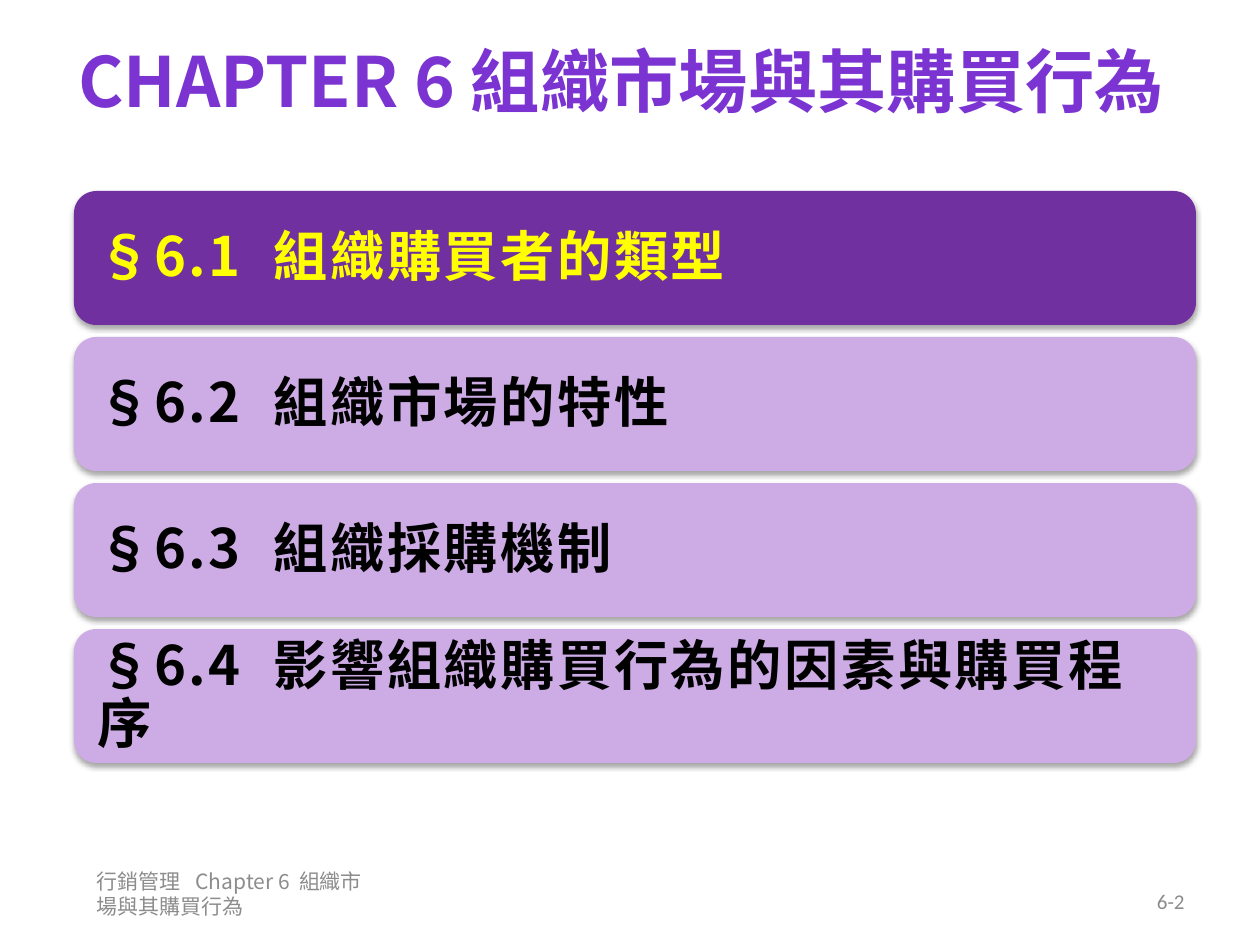
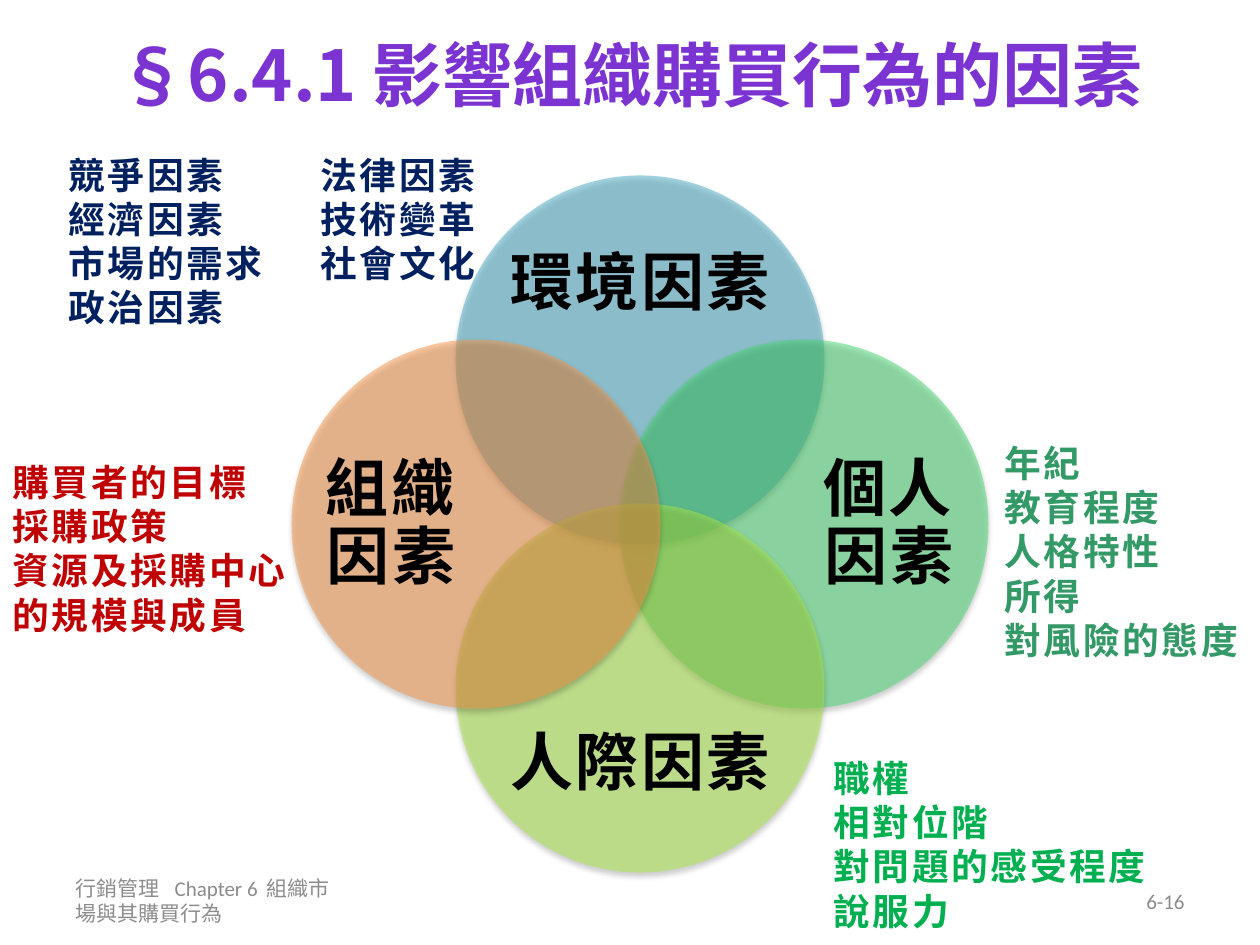
from dataclasses import dataclass

from lxml.etree import SubElement
from pptx import Presentation
from pptx.dml.color import RGBColor
from pptx.enum.shapes import MSO_SHAPE
from pptx.enum.text import MSO_ANCHOR, PP_ALIGN
from pptx.oxml.ns import qn
from pptx.util import Emu, Pt

# Within a line of text, a number is the extra width in points of the space there.
BAR_GAP = 10
FOOTER = ("行銷管理", 6, "Chapter 6", 2.5, "組織市場與其購買行為")

CHAPTER_TITLE = "CHAPTER 6 組織市場與其購買行為"
SECTIONS = [
    ("§6.1", BAR_GAP, "組織購買者的類型"),
    ("§6.2", BAR_GAP, "組織市場的特性"),
    ("§6.3", BAR_GAP, "組織採購機制"),
    ("§6.4", BAR_GAP, "影響組織購買行為的因素與購買程序"),
]
CURRENT_SECTION = 0

FACTORS_TITLE = "§6.4.1 影響組織購買行為的因素"
NOTES = [  # box in px, colour, lines
    ((56, 147, 248, 190), "002060", ["競爭因素", "經濟因素", "市場的需求", "政治因素"]),
    ((308, 147, 223, 146), "002060", ["法律因素", "技術變革", "社會文化"]),
    ((0, 454, 319, 190), "C00000", ["購買者的目標", "採購政策", "資源及採購中心的規模與成員"]),
    ((821, 750, 421, 190), "00B050", ["職權", "相對位階", "對問題的感受程度", "說服力"]),
    ((992, 435, 268, 235), "339966",
     ["年紀", "教育程度", "人格特性", "所得", "對風險的態度"]),
]
FACTORS = [  # name, colour, direction from the centre
    ("環境因素", "4BACC6", (0, -1)),
    ("個人因素", "47D872", (1, 0)),
    ("人際因素", "ACE946", (0, 1)),
    ("組織因素", "F79646", (-1, 0)),
]

# Geometry in px
BAR_LEFT, BAR_TOP, BAR_WIDTH, BAR_HEIGHT, BAR_SPACE = 74, 191, 1122, 134, 12
CENTRE_X, CENTRE_Y, DIAMETER, CIRCLE_OFFSET = 640, 524, 369, 164
WIDE_LABEL, TALL_LABEL = (285, 117), (142, 285)
WIDE_LABEL_OFFSET, TALL_LABEL_OFFSET = 240, 249


@dataclass(frozen=True)
class Theme:
    font: str = "Noto Sans CJK SC"
    latin: str = "Calibri"
    title: str = "7B34D2"
    footer: str = "8C8C8C"
    text: str = "000000"
    bar: str = "CDACE6"
    bar_current: str = "7030A0"
    text_current: str = "FFFF00"
    chapter_size: float = 39.6
    title_size: float = 40
    bar_size: float = 31
    label_size: float = 36
    note_size: float = 21
    footer_size: float = 12
    tracking: float = 1.5
    leading: float = 1.2
    tight_leading: float = 1.08


T = Theme()


def px(n):
    return Emu(round(n * 914400 / 126))


def place(shape, box):
    shape.left, shape.top, shape.width, shape.height = map(px, box)


def add_run(p, text, size, color, bold, tracking, latin):
    r = p.add_run()
    r.text = text
    r.font.size, r.font.bold, r.font.name = Pt(size), bold, latin
    r.font.color.rgb = RGBColor.from_string(color)
    rpr = r.font._element
    rpr.set("spc", str(round(tracking * 100)))
    SubElement(rpr, qn("a:ea")).set("typeface", T.font)


def write(shape, lines, size, color, bold=True, tracking=T.tracking, latin=T.font,
          align=PP_ALIGN.LEFT, anchor=MSO_ANCHOR.MIDDLE, leading=T.leading,
          inset_x=12.6, inset_y=6):
    """Fill a shape with one paragraph of lines at a fixed line height."""
    tf = shape.text_frame
    tf.word_wrap = True
    tf.vertical_anchor = anchor
    tf.margin_left = tf.margin_right = px(inset_x)
    tf.margin_top = tf.margin_bottom = px(inset_y)
    p = tf.paragraphs[0]
    p.alignment = align
    p.line_spacing = Pt(size * leading)
    p.space_before = p.space_after = Pt(0)
    for i, line in enumerate(lines):
        if i:
            p.add_line_break()
        for part in line if isinstance(line, tuple) else (line,):
            is_text = isinstance(part, str)
            add_run(p, part if is_text else " ", size, color, bold,
                    tracking if is_text else part, latin)


def add_text(s, box, lines, size, color, **style):
    write(s.shapes.add_textbox(*map(px, box)), lines, size, color, **style)


def add_shadowed(s, kind, box, color, shadow_alpha, alpha=100):
    sp = s.shapes.add_shape(kind, *map(px, box))
    sp.fill.solid()
    sp.fill.fore_color.rgb = RGBColor.from_string(color)
    sp.line.fill.background()
    sp.shadow.inherit = False
    sppr = sp._element.spPr
    if alpha < 100:
        fill = sppr.find(qn("a:solidFill")).find(qn("a:srgbClr"))
        SubElement(fill, qn("a:alpha")).set("val", str(alpha * 1000))
    shadow = SubElement(sppr.find(qn("a:effectLst")), qn("a:outerShdw"),
                        blurRad=str(Pt(3.1)), dist=str(Pt(1.8)), dir="5400000",
                        rotWithShape="0")
    black = SubElement(shadow, qn("a:srgbClr"), val="000000")
    SubElement(black, qn("a:alpha")).set("val", str(shadow_alpha * 1000))
    return sp


def add_slide(prs, title, title_size, title_box, page, footer_box, footer_font):
    s = prs.slides.add_slide(prs.slide_layouts[5])
    place(s.shapes.title, title_box)
    write(s.shapes.title, [title], title_size, T.title, tracking=0,
          align=PP_ALIGN.CENTER, inset_x=0)
    plain = dict(bold=False, tracking=0)
    add_text(s, footer_box, [FOOTER], T.footer_size, T.footer, latin=footer_font, **plain)
    add_text(s, (903, 876, 294, 50), [page], T.footer_size, T.footer, latin=T.latin,
             align=PP_ALIGN.RIGHT, **plain)
    return s


def build_chapter(prs):
    s = add_slide(prs, CHAPTER_TITLE, T.chapter_size, (54, 5, 1134, 150), "6-2",
                  (84, 869, 307, 50), T.font)
    for i, section in enumerate(SECTIONS):
        current = i == CURRENT_SECTION
        top = BAR_TOP + i * (BAR_HEIGHT + BAR_SPACE)
        bar = add_shadowed(s, MSO_SHAPE.ROUNDED_RECTANGLE,
                           (BAR_LEFT, top, BAR_WIDTH, BAR_HEIGHT),
                           T.bar_current if current else T.bar, 35)
        write(bar, [section], T.bar_size, T.text_current if current else T.text,
              leading=T.tight_leading, inset_x=17, inset_y=0)


def centred(x, y, width, height):
    return x - width / 2, y - height / 2, width, height


def build_factors(prs):
    s = add_slide(prs, FACTORS_TITLE, T.title_size, (63, 0, 1134, 147), "6-16",
                  (63, 876, 294, 50), T.latin)
    for box, color, lines in NOTES:
        add_text(s, box, lines, T.note_size, color, anchor=MSO_ANCHOR.TOP)
    for name, color, (dx, dy) in FACTORS:
        circle = centred(CENTRE_X + dx * CIRCLE_OFFSET, CENTRE_Y + dy * CIRCLE_OFFSET,
                         DIAMETER, DIAMETER)
        add_shadowed(s, MSO_SHAPE.OVAL, circle, color, 38, alpha=50)
        size = TALL_LABEL if dx else WIDE_LABEL
        label = centred(CENTRE_X + dx * TALL_LABEL_OFFSET,
                        CENTRE_Y + dy * WIDE_LABEL_OFFSET, *size)
        add_text(s, label, [name], T.label_size, T.text, align=PP_ALIGN.CENTER,
                 leading=T.tight_leading, inset_x=0, inset_y=0)


def main():
    prs = Presentation()
    prs.slide_width, prs.slide_height = px(1260), px(945)
    build_chapter(prs)
    build_factors(prs)
    prs.save("out.pptx")


if __name__ == "__main__":
    main()
